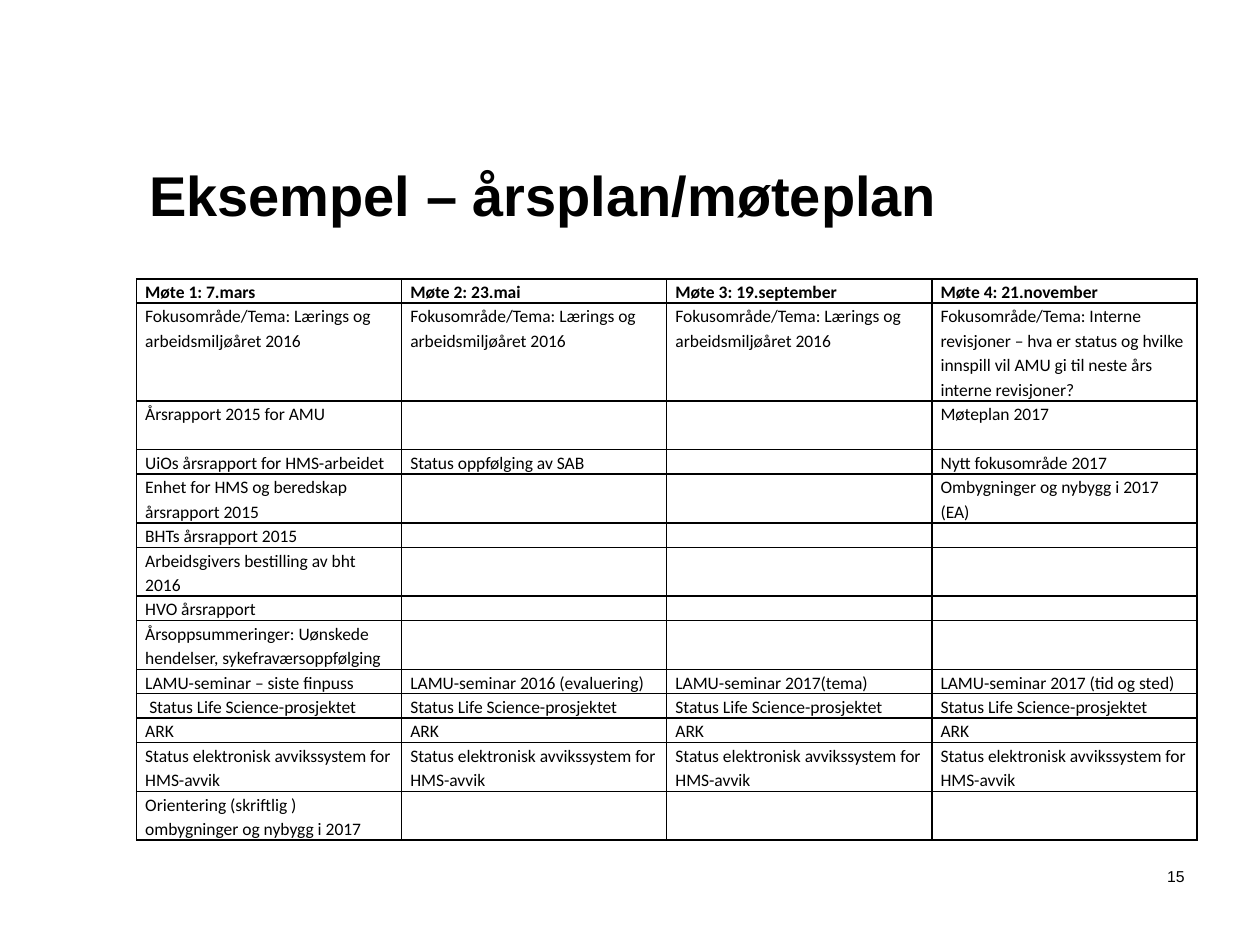
from lxml import etree
from pptx import Presentation
from pptx.dml.color import RGBColor
from pptx.enum.text import MSO_ANCHOR, PP_ALIGN
from pptx.oxml.ns import qn
from pptx.util import Pt

MIDDLE, TOP = MSO_ANCHOR.MIDDLE, MSO_ANCHOR.TOP
LEFT, RIGHT = PP_ALIGN.LEFT, PP_ALIGN.RIGHT
BLACK = RGBColor(0, 0, 0)

# Content
TITLE = "Eksempel – årsplan/møteplan"
PAGE_NUMBER = "15"
THEME = "Fokusområde/Tema: Lærings og arbeidsmiljøåret 2016"
PROJECT = "Status Life Science-prosjektet"
REPORTING = "Status elektronisk avvikssystem for HMS-avvik"
# Each row: number of text lines, then the text for the four meetings
ROWS = [
    (1, ["Møte 1: 7.mars", "Møte 2: 23.mai", "Møte 3: 19.september", "Møte 4: 21.november"]),
    (4, [THEME] * 3 + ["Fokusområde/Tema: Interne revisjoner – hva er status og hvilke "
                       "innspill vil AMU gi til neste års interne revisjoner?"]),
    (2, ["Årsrapport 2015 for AMU", "", "", "Møteplan 2017"]),
    (1, ["UiOs årsrapport for HMS-arbeidet", "Status oppfølging av SAB", "",
         "Nytt fokusområde 2017"]),
    (2, ["Enhet for HMS og beredskap årsrapport 2015", "", "",
         "Ombygninger og nybygg i 2017 (EA)"]),
    (1, ["BHTs årsrapport 2015", "", "", ""]),
    (2, ["Arbeidsgivers bestilling av bht 2016", "", "", ""]),
    (1, ["HVO årsrapport", "", "", ""]),
    (2, ["Årsoppsummeringer: Uønskede hendelser, sykefraværsoppfølging", "", "", ""]),
    (1, ["LAMU-seminar – siste finpuss", "LAMU-seminar 2016 (evaluering)",
         "LAMU-seminar 2017(tema)", "LAMU-seminar 2017 (tid og sted)"]),
    (1, [PROJECT] * 4),
    (1, ["ARK"] * 4),
    (2, [REPORTING] * 4),
    (2, ["Orientering (skriftlig ) ombygninger og nybygg i 2017", "", "", ""]),
]
INDENTED_CELL = (10, 0)

# Layout and formats
TABLE_LEFT, TABLE_TOP, TABLE_WIDTH = 78, 159.3, 606
LINE_HEIGHT = 13.95
TITLE_FONT = {"name": "Arial", "size": Pt(32), "bold": True}
NUMBER_FONT = {"name": "Arial", "size": Pt(9), "bold": False}
CELL_FONT = {"name": "Calibri", "size": Pt(10)}
CELL_MARGINS = {"margin_left": Pt(5), "margin_right": Pt(5),
                "margin_top": 0, "margin_bottom": 0}


def set_attributes(target, values):
    for name, value in values.items():
        setattr(target, name, value)


def write(paragraph, text, font):
    run = paragraph.add_run()
    run.text = text
    set_attributes(run.font, font)
    run.font.color.rgb = BLACK


def add_borders(cell):
    properties = cell._tc.get_or_add_tcPr()
    for index, side in enumerate(("lnL", "lnR", "lnT", "lnB")):
        line = etree.Element(qn(f"a:{side}"), w=str(Pt(1)))
        fill = etree.SubElement(line, qn("a:solidFill"))
        etree.SubElement(fill, qn("a:srgbClr"), val=str(BLACK))
        properties.insert(index, line)


def fill_cell(cell, text, bold):
    set_attributes(cell, CELL_MARGINS)
    cell.fill.background()
    add_borders(cell)
    paragraph = cell.text_frame.paragraphs[0]
    paragraph.line_spacing = 1.15
    if text:
        write(paragraph, text, {**CELL_FONT, "bold": bold})
    else:
        # Keeps an empty cell as low as one line of table text
        etree.SubElement(paragraph._p, qn("a:endParaRPr"), sz="1000")


presentation = Presentation()
presentation.slide_width, presentation.slide_height = Pt(720), Pt(540)
slide = presentation.slides.add_slide(presentation.slide_layouts[5])

# Title
title = slide.shapes.title
set_attributes(title, {"left": Pt(78), "top": Pt(66), "width": Pt(606), "height": Pt(90)})
title.text_frame.vertical_anchor = MIDDLE
title.text_frame.paragraphs[0].alignment = LEFT
write(title.text_frame.paragraphs[0], TITLE, TITLE_FONT)

# Page number
number = slide.shapes.add_textbox(Pt(630), Pt(492), Pt(54), Pt(36))
number.text_frame.word_wrap = True
number.text_frame.vertical_anchor = TOP
number.text_frame.paragraphs[0].alignment = RIGHT
write(number.text_frame.paragraphs[0], PAGE_NUMBER, NUMBER_FONT)

# Meeting plan
column_count = len(ROWS[0][1])
table_height = LINE_HEIGHT * sum(lines for lines, _ in ROWS)
table = slide.shapes.add_table(len(ROWS), column_count, Pt(TABLE_LEFT), Pt(TABLE_TOP),
                               Pt(TABLE_WIDTH), Pt(table_height)).table
table.horz_banding = False
for column in table.columns:
    column.width = Pt(TABLE_WIDTH / column_count)
for row_index, (lines, texts) in enumerate(ROWS):
    table.rows[row_index].height = Pt(LINE_HEIGHT * lines)
    for column_index, text in enumerate(texts):
        fill_cell(table.cell(row_index, column_index), text, bold=row_index == 0)
table.cell(*INDENTED_CELL).margin_left = Pt(7.3)

presentation.save("out.pptx")
